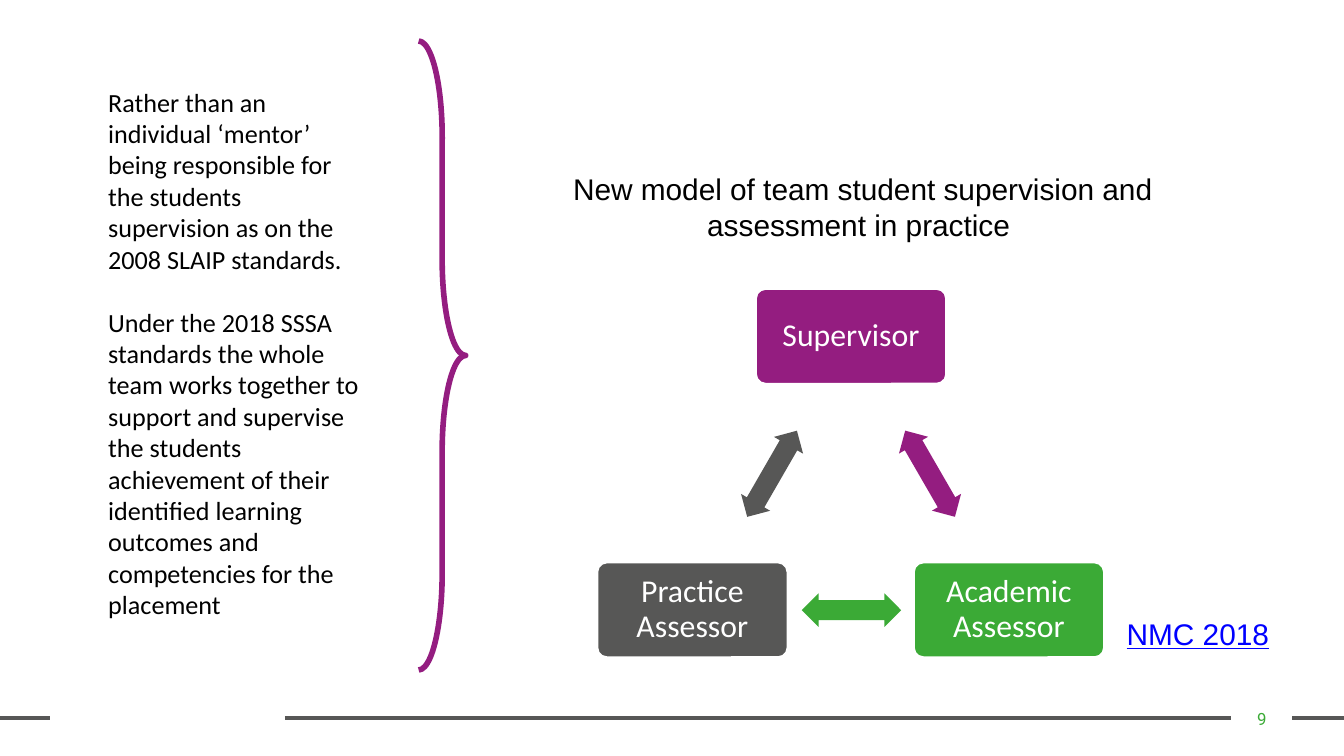
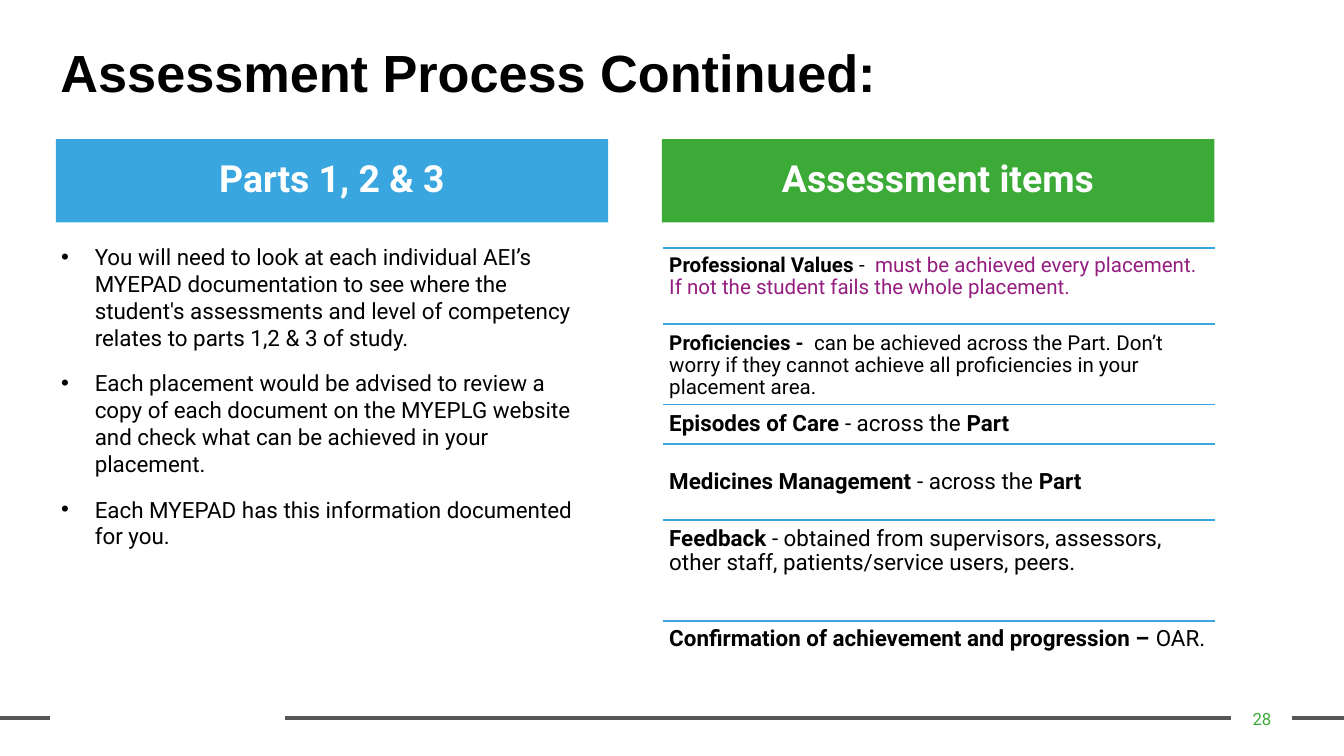
from dataclasses import dataclass

from lxml import etree
from pptx import Presentation
from pptx.dml.color import RGBColor
from pptx.enum.shapes import MSO_CONNECTOR, MSO_SHAPE
from pptx.enum.text import MSO_ANCHOR, MSO_AUTO_SIZE, PP_ALIGN
from pptx.oxml.ns import qn
from pptx.shapes.autoshape import Shape
from pptx.slide import Slide
from pptx.text.text import TextFrame
from pptx.util import Emu, Pt

STRAIGHT = MSO_CONNECTOR.STRAIGHT
RECTANGLE = MSO_SHAPE.RECTANGLE
ROUNDED = MSO_SHAPE.ROUNDED_RECTANGLE
ARROW = MSO_SHAPE.LEFT_RIGHT_ARROW
BRACE = MSO_SHAPE.RIGHT_BRACE
TOP, MIDDLE = MSO_ANCHOR.TOP, MSO_ANCHOR.MIDDLE
LEFT, CENTER = PP_ALIGN.LEFT, PP_ALIGN.CENTER

# Shared look: 200 px to the inch
PX = 4572
PAGE_WIDTH, PAGE_HEIGHT = 2000, 1125
BLACK, WHITE, GREY = "000000", "FFFFFF", "575756"
PURPLE, GREEN, BLUE, LINK = "941D80", "3BAA36", "39A6DF", "0000FF"
ARIAL, CALIBRI, ROBOTO = "Arial", "Calibri", "Roboto"
TITLE_AND_BODY = 1
FOOTER_Y = 1069
FOOTER_LINES = [(1923, 2000), (424, 1832), (-2, 74)]


@dataclass(frozen=True)
class Area:
    left: int
    top: int
    width: int
    height: int

    def emu(self) -> list[Emu]:
        return [px(n) for n in (self.left, self.top, self.width, self.height)]


@dataclass(frozen=True)
class Style:
    size: int
    font: str
    color: str = BLACK
    bold: bool = False
    underline: bool = False
    align: int = LEFT
    spacing: float = 1.0


@dataclass(frozen=True)
class Role:
    name: str
    left: int
    top: int
    color: str


@dataclass(frozen=True)
class Swap:
    left: int
    top: int
    angle: int
    color: str


@dataclass(frozen=True)
class Band:
    text: str
    left: int
    color: str


@dataclass(frozen=True)
class Span:
    text: str
    bold: bool = False
    color: str = BLACK


@dataclass(frozen=True)
class Item:
    rule_y: int
    text_y: int
    height: int
    size: int
    anchor: int
    spans: list[Span]


# Slide 1 content
MODEL = "New model of team student supervision and assessment in practice "
CHANGES = [
    "Rather than an individual ‘mentor’ being responsible for the students "
    "supervision as on the 2008 SLAIP standards.",
    "Under the 2018 SSSA standards the whole team works together to support and "
    "supervise the students achievement of their identified learning outcomes "
    "and competencies for the placement",
]
ROLES = [
    Role("Supervisor", 1125, 430, PURPLE),
    Role("Academic Assessor", 1360, 837, GREEN),
    Role("Practice Assessor", 889, 837, GREY),
]
SWAPS = [
    Swap(1310, 680, 60, PURPLE),
    Swap(1193, 883, 180, GREEN),
    Swap(1075, 680, 300, GREY),
]

# Slide 2 content
BANDS = [Band("Parts 1, 2 & 3", 83, BLUE), Band("Assessment items", 985, GREEN)]
ADVICE = [
    "You will need to look at each individual AEI’s MYEPAD documentation to see "
    "where the student's assessments and level of competency relates to parts "
    "1,2 & 3 of study.",
    "Each placement would be advised to review a copy of each document on the "
    "MYEPLG website and check what can be achieved in your placement.",
    "Each MYEPAD has this information documented for you.",
]
ITEMS = [
    Item(369, 369, 112, 11, TOP, [
        Span("Professional Values ", True), Span("-  "),
        Span("must be achieved every placement. If not the student fails "
             "the whole placement.", False, PURPLE)]),
    Item(482, 488, 112, 11, MIDDLE, [
        Span("Proficiencies -  ", True),
        Span("can be achieved across the Part. Don’t worry if they cannot achieve "
             "all proficiencies in your placement area.")]),
    Item(602, 604, 66, 12, TOP, [
        Span("Episodes of Care ", True), Span("- across the "), Span("Part", True)]),
    Item(661, 661, 112, 12, MIDDLE, [
        Span("Medicines Management ", True), Span("- across the "),
        Span("Part", True)]),
    Item(774, 774, 150, 12, TOP, [
        Span("Feedback", True),
        Span(" - obtained from supervisors, assessors, other staff, "
             "patients/service users, peers.")]),
    Item(924, 924, 112, 12, TOP, [
        Span("Confirmation of achievement and progression – ", True),
        Span("OAR.")]),
]


def px(length: int) -> Emu:
    return Emu(length * PX)


def rgb(value: str) -> RGBColor:
    return RGBColor.from_string(value)


def set_frame(frame: TextFrame, anchor: int, side: int = 20, edge: int = 10) -> None:
    frame.word_wrap = True
    frame.auto_size = MSO_AUTO_SIZE.NONE
    frame.vertical_anchor = anchor
    frame.margin_left = frame.margin_right = px(side)
    frame.margin_top = frame.margin_bottom = px(edge)


def format_text(frame: TextFrame, style: Style, gap: int = 0) -> None:
    for index, para in enumerate(frame.paragraphs):
        para.alignment = style.align
        para.line_spacing = style.spacing
        para.space_before = Pt(gap if index else 0)
        para.space_after = Pt(0)
        for span in para.runs:
            span.font.size = Pt(style.size)
            span.font.name = style.font
            span.font.bold = style.bold
            span.font.underline = style.underline
            span.font.color.rgb = rgb(style.color)


def fill_placeholder(box: Shape, area: Area, text: str, style: Style,
                     gap: int = 0) -> None:
    box.left, box.top, box.width, box.height = area.emu()
    set_frame(box.text_frame, TOP)
    box.text_frame.text = text
    format_text(box.text_frame, style, gap)


def set_bullets(frame: TextFrame, mark: str, indent: int) -> None:
    for para in frame.paragraphs:
        props = para._p.get_or_add_pPr()
        props.set("marL", str(px(indent)))
        props.set("indent", str(px(-indent)))
        if mark:
            font = etree.SubElement(props, qn("a:buFont"))
            font.set("typeface", ARIAL)
            etree.SubElement(props, qn("a:buChar")).set("char", mark)
        else:
            etree.SubElement(props, qn("a:buNone"))


def add_label(page: Slide, area: Area, text: str, style: Style,
              anchor: int = TOP, side: int = 20, edge: int = 10) -> TextFrame:
    frame = page.shapes.add_textbox(*area.emu()).text_frame
    set_frame(frame, anchor, side, edge)
    frame.text = text
    format_text(frame, style)
    return frame


def add_block(page: Slide, kind: int, area: Area, fill: str = "",
              line: str = "", width: int = 1) -> Shape:
    block = page.shapes.add_shape(kind, *area.emu())
    block.shadow.inherit = False
    if fill:
        block.fill.solid()
        block.fill.fore_color.rgb = rgb(fill)
    else:
        block.fill.background()
    if line:
        block.line.color.rgb = rgb(line)
        block.line.width = Pt(width)
    else:
        block.line.fill.background()
    return block


def add_rule(page: Slide, start: int, end: int, y: int, color: str,
             width: float) -> None:
    rule = page.shapes.add_connector(STRAIGHT, px(start), px(y), px(end), px(y))
    rule.line.color.rgb = rgb(color)
    rule.line.width = Pt(width)
    etree.SubElement(rule._element.spPr, qn("a:effectLst"))


def add_page(deck: Presentation, number: int) -> Slide:
    page = deck.slides.add_slide(deck.slide_layouts[TITLE_AND_BODY])
    for start, end in FOOTER_LINES:
        add_rule(page, start, end, FOOTER_Y, GREY, 2.25)
    add_label(page, Area(1832, 1040, 92, 60), str(number),
              Style(9, ROBOTO, GREEN, align=CENTER), MIDDLE, 14, 8)
    return page


def build_model(deck: Presentation) -> None:
    page = add_page(deck, 9)
    fill_placeholder(page.shapes.title, Area(772, 244, 1024, 128), MODEL,
                     Style(16, ARIAL, align=CENTER))
    body = page.placeholders[1]
    fill_placeholder(body, Area(141, 118, 426, 822), "\n".join(CHANGES),
                     Style(14, CALIBRI), 17)
    set_bullets(body.text_frame, "", 0)

    brace = add_block(page, BRACE, Area(623, 61, 70, 936), line=PURPLE, width=3)
    brace.adjustments[0] = 2.04
    add_label(page, Area(1657, 906, 356, 74), "NMC 2018",
              Style(16, ARIAL, LINK, underline=True))

    # Triangle of roles joined by two-way arrows
    for role in ROLES:
        box = add_block(page, ROUNDED, Area(role.left, role.top, 283, 141),
                        role.color, WHITE)
        box.adjustments[0] = 0.1
        set_frame(box.text_frame, MIDDLE, 18, 18)
        box.text_frame.text = role.name
        format_text(box.text_frame,
                    Style(17, CALIBRI, WHITE, align=CENTER, spacing=0.9))
    for swap in SWAPS:
        arrow = add_block(page, ARROW, Area(swap.left, swap.top, 148, 50), swap.color)
        arrow.adjustments[0] = 0.6
        arrow.rotation = swap.angle


def build_assessment(deck: Presentation) -> None:
    page = add_page(deck, 28)
    fill_placeholder(page.shapes.title, Area(70, 61, 1860, 130),
                     "Assessment Process Continued:",
                     Style(28, ARIAL, bold=True, spacing=0.9))
    body = page.placeholders[1]
    fill_placeholder(body, Area(71, 352, 834, 616), "\n".join(ADVICE),
                     Style(12, ROBOTO), 10)
    set_bullets(body.text_frame, "•", 50)

    # Column headings
    for band in BANDS:
        box = add_block(page, RECTANGLE, Area(band.left, 207, 822, 124), band.color)
        set_frame(box.text_frame, MIDDLE)
        box.text_frame.text = band.text
        format_text(box.text_frame, Style(20, ROBOTO, WHITE, bold=True,
                                          align=CENTER, spacing=0.9))

    # Ruled list of assessment items
    for item in ITEMS:
        add_rule(page, 986, 1808, item.rule_y, BLUE, 1)
        style = Style(item.size, ROBOTO, spacing=0.9)
        frame = add_label(page, Area(986, item.text_y, 820, item.height), "",
                          style, item.anchor, 10, 10)
        runs = [frame.paragraphs[0].add_run() for _ in item.spans]
        for run, span in zip(runs, item.spans):
            run.text = span.text
        format_text(frame, style)
        for run, span in zip(runs, item.spans):
            run.font.bold = span.bold
            run.font.color.rgb = rgb(span.color)


def main() -> None:
    deck = Presentation()
    deck.slide_width, deck.slide_height = px(PAGE_WIDTH), px(PAGE_HEIGHT)
    build_model(deck)
    build_assessment(deck)
    deck.save("out.pptx")


if __name__ == "__main__":
    main()
